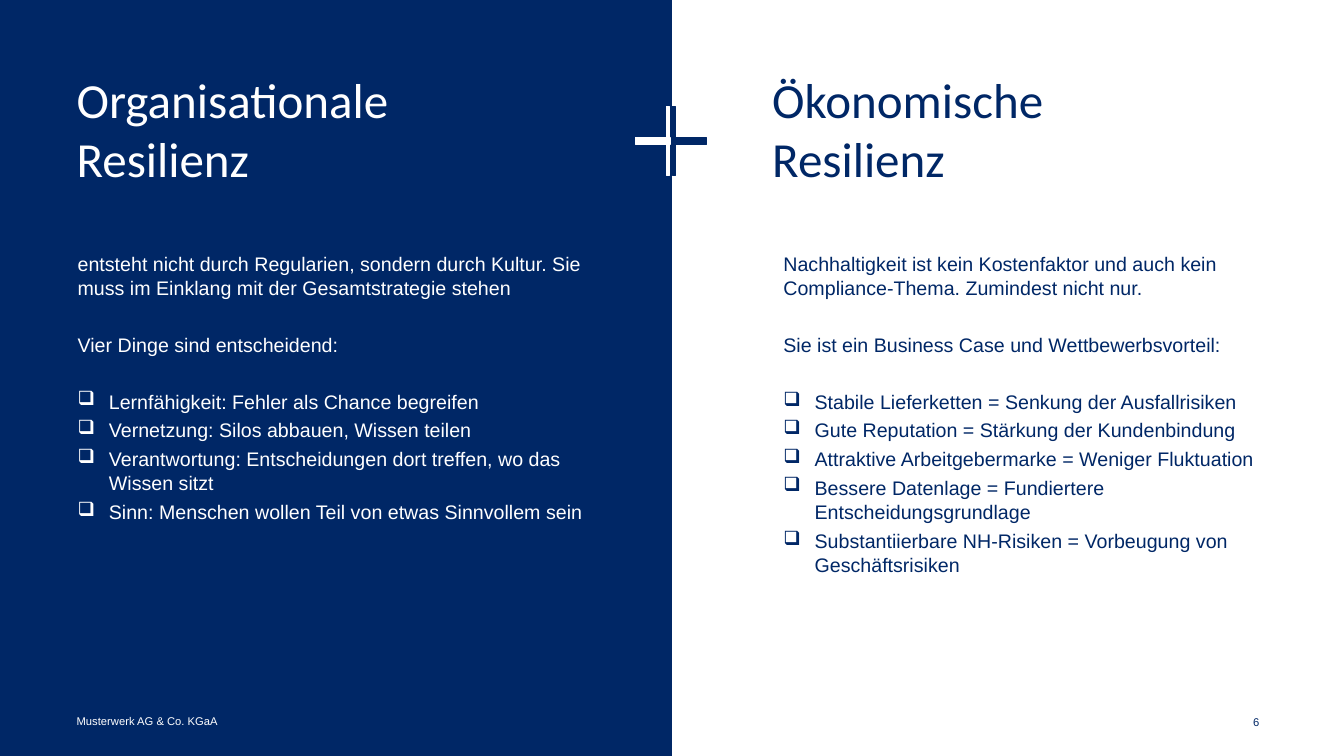
from dataclasses import dataclass

from lxml.etree import SubElement
from pptx import Presentation
from pptx.dml.color import RGBColor
from pptx.enum.shapes import MSO_SHAPE
from pptx.enum.text import MSO_ANCHOR, MSO_AUTO_SIZE, PP_ALIGN
from pptx.oxml.ns import qn
from pptx.util import Inches, Pt


@dataclass(frozen=True)
class Theme:
    navy: RGBColor = RGBColor(0x00, 0x27, 0x66)
    white: RGBColor = RGBColor(0xFF, 0xFF, 0xFF)
    title_font: str = "Calibri"
    body_font: str = "Arial"
    title_size: int = 35
    body_size: int = 14
    footer_size: int = 8
    line_spacing: float = 1.04
    item_gap: int = 3
    section_gap: int = 23


theme = Theme()
presentation = Presentation()
presentation.slide_width, presentation.slide_height = Inches(13.33), Inches(7.5)
slide = presentation.slides.add_slide(presentation.slide_layouts[5])

# Grid of 100 columns by 100 rows
column = presentation.slide_width / 100
row = presentation.slide_height / 100


def add_block(left, top, width, height, color):
    shape = slide.shapes.add_shape(
        MSO_SHAPE.RECTANGLE,
        int(left * column), int(top * row), int(width * column), int(height * row))
    shape.shadow.inherit = False
    shape.fill.solid()
    shape.fill.fore_color.rgb = color
    shape.line.color.rgb = color
    shape.line.width = Pt(1)
    return shape


def fill_text(shape, box, texts, font_name, size, color, anchor=MSO_ANCHOR.TOP):
    left, top, width, height = box
    shape.left, shape.top = int(left * column), int(top * row)
    shape.width, shape.height = int(width * column), int(height * row)
    frame = shape.text_frame
    frame.word_wrap = True
    frame.auto_size = MSO_AUTO_SIZE.NONE
    frame.vertical_anchor = anchor
    frame.margin_left = frame.margin_right = frame.margin_top = frame.margin_bottom = 0
    frame.text = "\n".join(texts)
    for paragraph in frame.paragraphs:
        paragraph.alignment = PP_ALIGN.LEFT
        paragraph.font.name = font_name
        paragraph.font.size = Pt(size)
        paragraph.font.color.rgb = color
    return frame.paragraphs


# Dark left half, behind the title
panel = add_block(0, 0, 50, 100, theme.navy)
panel.line.fill.background()
slide.shapes.title._element.addprevious(panel._element)

# Two columns: title, two introductory paragraphs, checklist
halves = [
    (theme.white, slide.shapes.title, 5.7, (5.78, 33.2, 38.56, 27.33),
     "Organisationale\vResilienz",
     ["entsteht nicht durch Regularien, sondern durch Kultur. "
      "Sie muss im Einklang mit der Gesamtstrategie stehen",
      "Vier Dinge sind entscheidend:"],
     ["Lernfähigkeit: Fehler als Chance begreifen",
      "Vernetzung: Silos abbauen, Wissen teilen",
      "Verantwortung: Entscheidungen dort treffen, wo das Wissen sitzt",
      "Sinn: Menschen wollen Teil von etwas Sinnvollem sein"]),
    (theme.navy, slide.shapes.add_textbox(0, 0, 0, 0), 57.46, (58.29, 33.2, 35.33, 46.67),
     "Ökonomische\vResilienz",
     ["Nachhaltigkeit ist kein Kostenfaktor und auch kein Compliance-Thema. "
      "Zumindest nicht nur.",
      "Sie ist ein Business Case und Wettbewerbsvorteil:"],
     ["Stabile Lieferketten = Senkung der Ausfallrisiken",
      "Gute Reputation = Stärkung der Kundenbindung",
      "Attraktive Arbeitgebermarke = Weniger Fluktuation",
      "Bessere Datenlage = Fundiertere Entscheidungsgrundlage",
      "Substantiierbare NH-Risiken = Vorbeugung von Geschäftsrisiken"]),
]
for color, heading, heading_left, body_box, title, intro, checklist in halves:
    fill_text(heading, (heading_left, 9.2, 33.08, 10.53), [title],
              theme.title_font, theme.title_size, color)
    body = slide.shapes.add_textbox(0, 0, 0, 0)
    # Bullets go in before the fonts are set
    body.text_frame.text = "\n".join(intro + checklist)
    paragraphs = fill_text(body, body_box, intro + checklist,
                           theme.body_font, theme.body_size, color)
    for index, paragraph in enumerate(paragraphs):
        is_intro = index < len(intro)
        paragraph.line_spacing = theme.line_spacing
        paragraph.space_after = Pt(theme.section_gap if is_intro else theme.item_gap)
        if not is_intro:
            properties = paragraph._p.get_or_add_pPr()
            properties.set("marL", str(Inches(0.31)))
            properties.set("indent", str(-Inches(0.31)))
            bullet = SubElement(properties, qn("a:buChar"), char="❑")
            properties.find(qn("a:defRPr")).addprevious(bullet)

# Plus sign across the centre line
for color, upright_left, arm_left in [(theme.white, 49.59, 47.3), (theme.navy, 50.04, 50)]:
    add_block(upright_left, 14.13, 0.23, 9.07, color)
    add_block(arm_left, 18.2, 2.55, 0.93, color)

# Footer and page number
fill_text(slide.shapes.add_textbox(0, 0, 0, 0), (5.7, 94.67, 42.54, 1.6),
          ["Musterwerk AG & Co. KGaA"], theme.body_font, theme.footer_size,
          theme.white, MSO_ANCHOR.BOTTOM)
page_number = fill_text(slide.shapes.add_textbox(0, 0, 0, 0), (89.57, 94.67, 4.13, 1.6),
                        ["6"], theme.body_font, theme.footer_size,
                        theme.navy, MSO_ANCHOR.MIDDLE)
page_number[0].alignment = PP_ALIGN.RIGHT

presentation.save("out.pptx")
